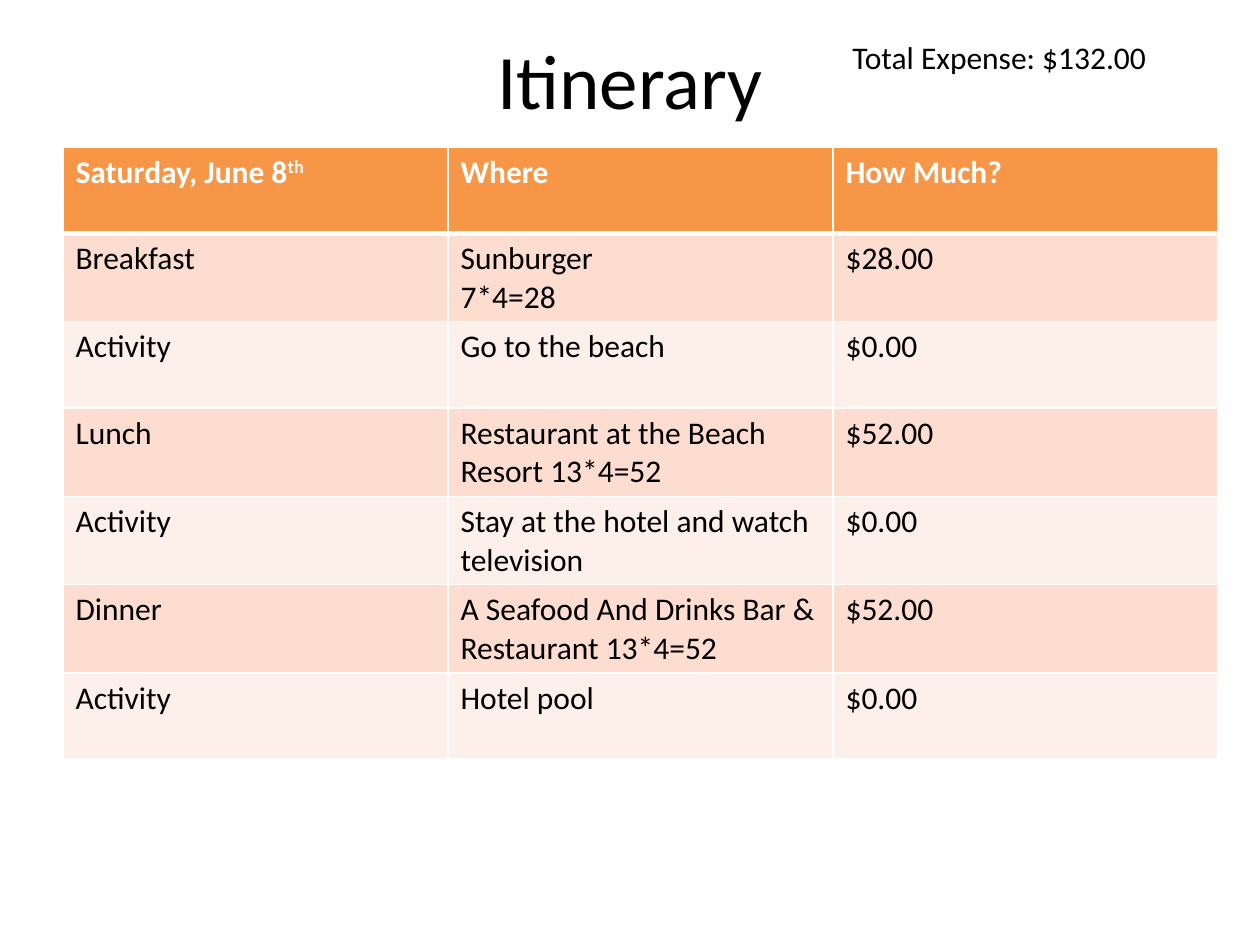
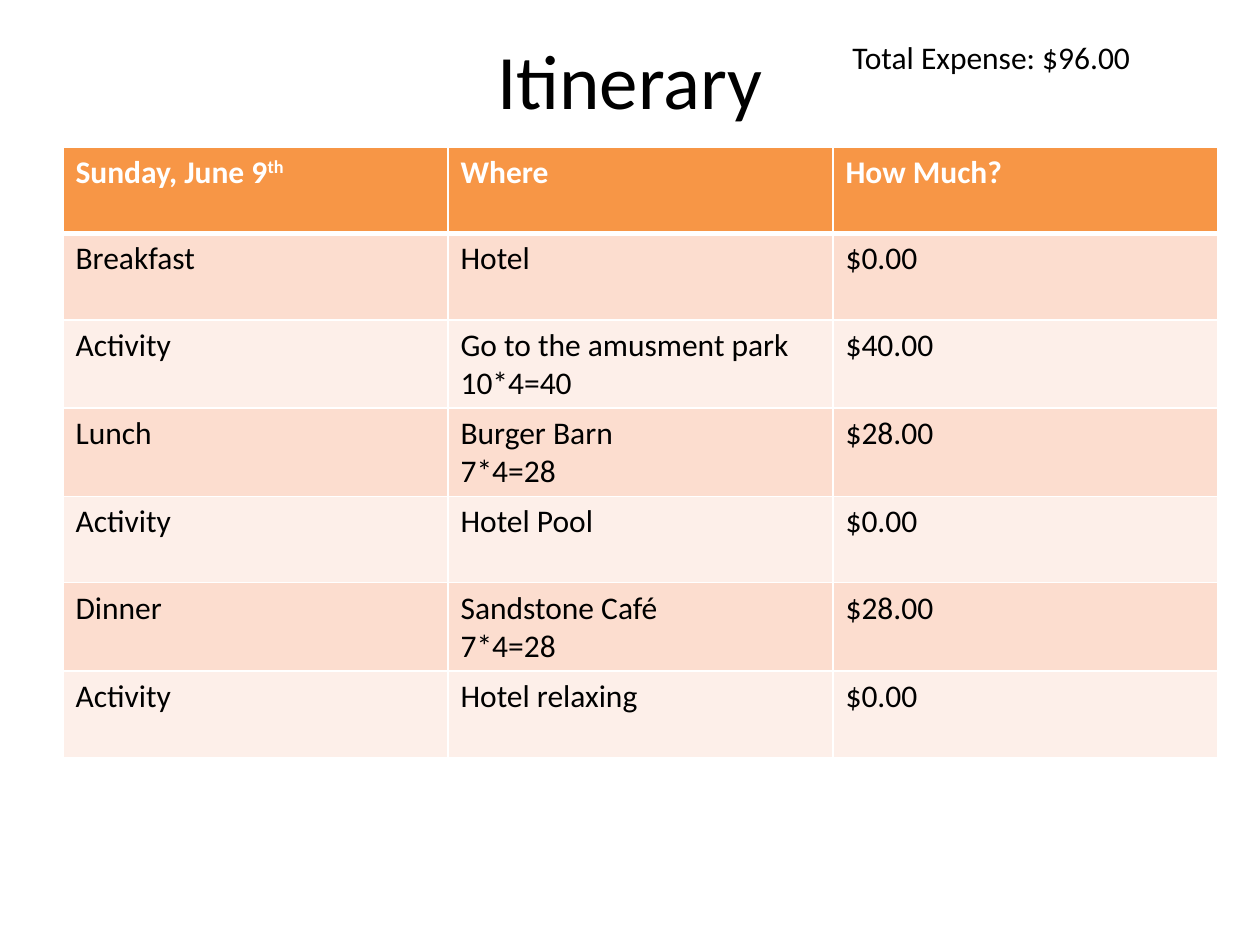
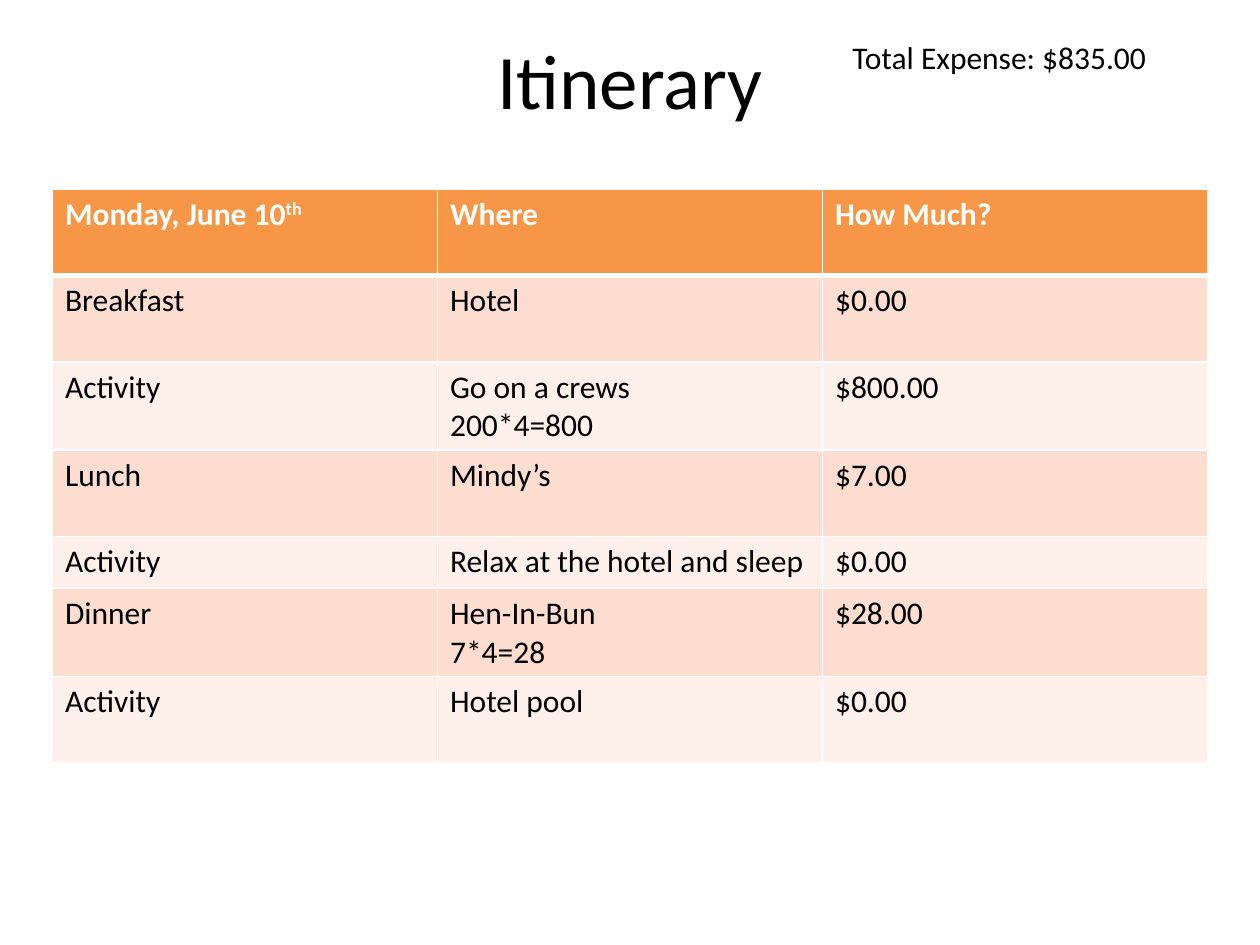
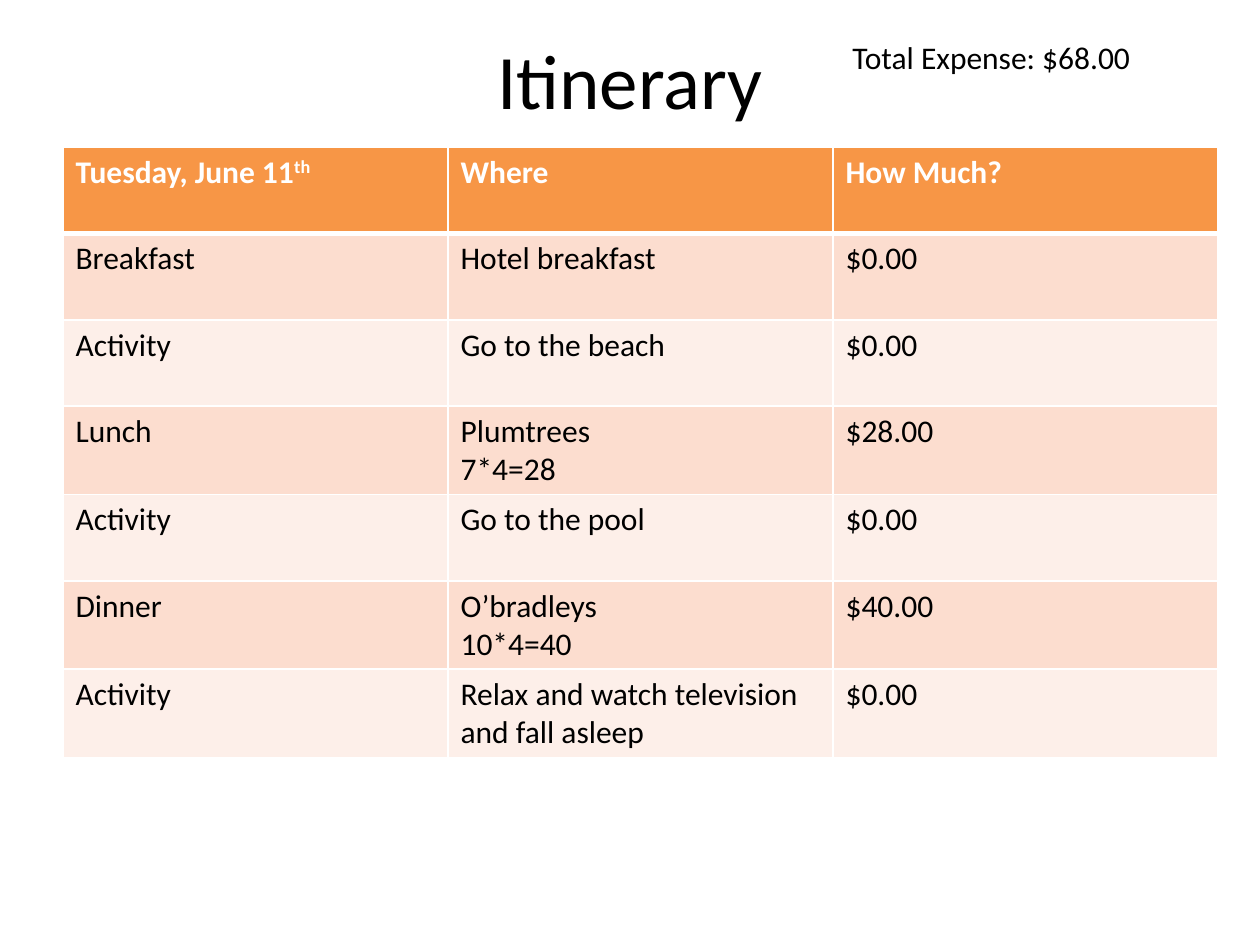
from lxml import etree
from pptx import Presentation
from pptx import util as u
from pptx.dml.color import RGBColor
from pptx.enum import text
from pptx.oxml import ns

COLORS = {"header": "F79646", "band": "FCDDCF", "light": "FDEFE9",
          "white": "FFFFFF", "black": "000000"}
FONT = "Calibri"
SLOTS = ["Breakfast", "Activity", "Lunch", "Activity", "Dinner", "Activity"]
COL_W = 220
ROW_H = 49.4
SHORT_ROW_H = 29.7

DAYS = [
    {"day": "Saturday, June 8", "plans": [
        ("Sunburger\n7*4=28", 28),
        ("Go to the beach", 0),
        ("Restaurant at the Beach Resort 13*4=52", 52),
        ("Stay at the hotel and watch television", 0),
        ("A Seafood And Drinks Bar & Restaurant 13*4=52", 52),
        ("Hotel pool", 0)]},
    {"day": "Sunday, June 9", "plans": [
        ("Hotel", 0),
        ("Go to the amusment park\n10*4=40", 40),
        ("Burger Barn\n7*4=28", 28),
        ("Hotel Pool", 0),
        ("Sandstone Café\n7*4=28", 28),
        ("Hotel relaxing", 0)]},
    {"day": "Monday, June 10", "left": 30, "top": 108, "short_rows": [4], "plans": [
        ("Hotel", 0),
        ("Go on a crews\n200*4=800", 800),
        ("Mindy’s", 7),
        ("Relax at the hotel and sleep", 0),
        ("Hen-In-Bun\n7*4=28", 28),
        ("Hotel pool", 0)]},
    {"day": "Tuesday, June 11", "plans": [
        ("Hotel breakfast", 0),
        ("Go to the beach", 0),
        ("Plumtrees\n7*4=28", 28),
        ("Go to the pool", 0),
        ("O’bradleys\n10*4=40", 40),
        ("Relax and watch television and fall asleep", 0)]},
]


def money(amount):
    return f"${amount:.2f}"


class Deck:
    def __init__(self):
        self.prs = Presentation()
        self.prs.slide_width, self.prs.slide_height = u.Pt(720), u.Pt(540)
        self.slide = None

    def new_slide(self):
        self.slide = self.prs.slides.add_slide(self.prs.slide_layouts[5])

    def style(self, tf, size, color="black", bold=False):
        for p in tf.paragraphs:
            for r in p.runs:
                r.font.name = FONT
                r.font.size = u.Pt(size)
                r.font.bold = bold
                r.font.color.rgb = RGBColor.from_string(COLORS[color])

    def title(self, words):
        sp = self.slide.shapes.title
        sp.left, sp.top, sp.width, sp.height = u.Pt(36), u.Pt(0), u.Pt(648), u.Pt(90)
        tf = sp.text_frame
        tf.text = words
        tf.vertical_anchor = text.MSO_ANCHOR.MIDDLE
        tf.paragraphs[0].alignment = text.PP_ALIGN.CENTER
        self.style(tf, 44)

    def label(self, words, left, top, width, height):
        sp = self.slide.shapes.add_textbox(u.Pt(left), u.Pt(top), u.Pt(width), u.Pt(height))
        tf = sp.text_frame
        tf.word_wrap = True
        tf.auto_size = text.MSO_AUTO_SIZE.SHAPE_TO_FIT_TEXT
        tf.text = words
        self.style(tf, 18)

    def borders(self, cell, row):
        tc_pr = cell._tc.get_or_add_tcPr()
        widths = {"L": 1, "R": 1, "T": 3 if row == 1 else 1, "B": 3 if row == 0 else 1}
        for side, width in widths.items():
            ln = etree.SubElement(tc_pr, ns.qn(f"a:ln{side}"), w=str(u.Pt(width)))
            fill = etree.SubElement(ln, ns.qn("a:solidFill"))
            etree.SubElement(fill, ns.qn("a:srgbClr"), val=COLORS["white"])

    def table(self, rows, left, top, short_rows):
        heights = [SHORT_ROW_H if i in short_rows else ROW_H for i in range(len(rows))]
        cols = len(rows[0])
        tbl = self.slide.shapes.add_table(
            len(rows), cols, u.Pt(left), u.Pt(top),
            u.Pt(COL_W * cols), u.Pt(sum(heights))).table
        tbl.horz_banding = False
        for col in tbl.columns:
            col.width = u.Pt(COL_W)
        for i, values in enumerate(rows):
            tbl.rows[i].height = u.Pt(heights[i])
            fill = "header" if i == 0 else "band" if i % 2 else "light"
            for j, value in enumerate(values):
                cell = tbl.cell(i, j)
                self.borders(cell, i)
                cell.fill.solid()
                cell.fill.fore_color.rgb = RGBColor.from_string(COLORS[fill])
                tf = cell.text_frame
                tf.text = value
                if i == j == 0:
                    r = tf.paragraphs[0].add_run()
                    r.text = "th"
                    r._r.get_or_add_rPr().set("baseline", "30000")
                self.style(tf, 18, "white" if i == 0 else "black", i == 0)


def main():
    deck = Deck()
    for day in DAYS:
        plans = day["plans"]
        rows = [(day["day"], "Where", "How Much?")]
        rows += [(slot, where, money(cost)) for slot, (where, cost) in zip(SLOTS, plans)]
        short_rows = day.get("short_rows", [])
        deck.new_slide()
        deck.title("Itinerary")
        deck.label(f"Total Expense: {money(sum(cost for _, cost in plans))}", 480, 18, 222, 29)
        deck.table(rows, day.get("left", 36), day.get("top", 84), short_rows)
    deck.prs.save("out.pptx")


if __name__ == "__main__":
    main()
